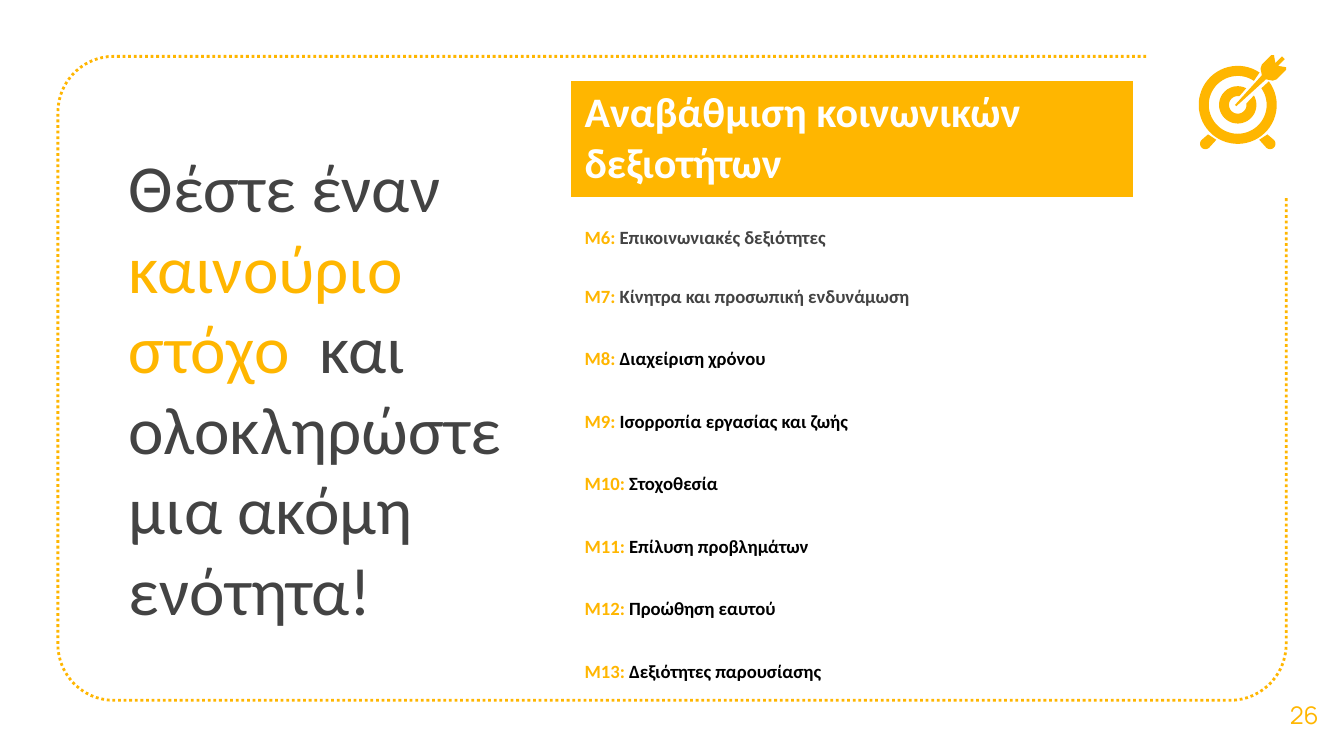
import math

from pptx import Presentation
from pptx.dml.color import RGBColor
from pptx.enum import dml, text
from pptx.oxml.ns import qn
from pptx.util import Pt

COLORS = {"accent": "FFB600", "dark": "434343", "black": "000000", "white": "FFFFFF"}
FONT = "Calibri"
NO_TABLE_STYLE = "{2D5ABB26-0587-4C30-8999-92F81FD0307C}"
UNITS = 100  # outline units in a point

TITLE = [
    ("Θέστε έναν ", "dark"),
    ("καινούριο στόχο  ", "accent"),
    ("και ολοκληρώστε μια ακόμη ενότητα!", "dark"),
]
HEADING = "Αναβάθμιση κοινωνικών δεξιοτήτων"
FIRST_MODULE = 6
MODULES = [
    ("Επικοινωνιακές δεξιότητες", "dark"),
    ("Κίνητρα και προσωπική ενδυνάμωση", "dark"),
    ("Διαχείριση χρόνου", "black"),
    ("Ισορροπία εργασίας και ζωής", "black"),
    ("Στοχοθεσία", "black"),
    ("Επίλυση προβλημάτων", "black"),
    ("Προώθηση εαυτού", "black"),
    ("Δεξιότητες παρουσίασης", "black"),
]


def rgb(name):
    return RGBColor.from_string(COLORS[name])


def add_span(para, words, color, size, font=FONT, bold=False):
    span = para.add_run()
    span.text = words
    span.font.name = font
    span.font.size = Pt(size)
    span.font.bold = bold
    span.font.color.rgb = rgb(color)


def add_text_box(page, box, spans, size, font=FONT, align=text.PP_ALIGN.LEFT,
                 anchor=text.MSO_ANCHOR.TOP):
    frame = page.shapes.add_textbox(*map(Pt, box)).text_frame
    frame.word_wrap = True
    frame.vertical_anchor = anchor
    frame.margin_left = frame.margin_right = Pt(7.2)
    frame.margin_top = frame.margin_bottom = Pt(7.2)
    para = frame.paragraphs[0]
    para.alignment = align
    for words, color in spans:
        add_span(para, words, color, size, font)


def arc(center, radius, start, end, step=6):
    """Points on an arc; degrees run clockwise from the right."""
    count = max(1, math.ceil(abs(end - start) / step))
    angles = [math.radians(start + (end - start) * i / count) for i in range(count + 1)]
    return [(center[0] + radius * math.cos(a), center[1] + radius * math.sin(a))
            for a in angles]


def add_outline(shapes, points, origin=(0, 0), close=True):
    scaled = [((x + origin[0]) * UNITS, (y + origin[1]) * UNITS) for x, y in points]
    builder = shapes.build_freeform(*scaled[0], scale=Pt(1) / UNITS)
    builder.add_line_segments(scaled[1:], close=close)
    shape = builder.convert_to_shape()
    shape.shadow.inherit = False
    return shape


def add_dotted_frame(page, box, radius, top_end, right_start):
    """Rounded frame left open at its top right corner."""
    left, top, width, height = box
    right, bottom = left + width, top + height
    points = [(top_end, top)]
    points += arc((left + radius, top + radius), radius, 270, 180)
    points += arc((left + radius, bottom - radius), radius, 180, 90)
    points += arc((right - radius, bottom - radius), radius, 90, 0)
    points.append((right, right_start))
    frame = add_outline(page.shapes, points, close=False)
    frame.fill.background()
    frame.line.color.rgb = rgb("accent")
    frame.line.width = Pt(1.5)
    frame.line.dash_style = dml.MSO_LINE.ROUND_DOT


def add_target_icon(page, origin):
    center = (20.9, 27.4)
    outer_ring = arc(center, 20.9, -37, 304) + arc(center, 15.5, 304, -35)
    inner_ring = arc(center, 10, -30, 297) + arc(center, 4.7, 280, -9)
    left_foot = arc((3.6, 48.2), 2.9, 45, 225) + [(5, 43.2), (9.4, 46.1)]
    right_foot = [(2 * center[0] - x, y) for x, y in left_foot]
    half_arrow = [(19.4, 27.4), (33.8, 11.5), (33.1, 7.9), (33.8, 5.8),
                  (38.9, 0.7), (40.3, 0.7), (41, 5), (44.6, 1.4)]
    diagonal = 47.5  # x + y along the arrow's axis
    arrow = half_arrow + [(diagonal - y, diagonal - x) for x, y in reversed(half_arrow)]

    icon = page.shapes.add_group_shape()
    for points in (outer_ring, inner_ring, left_foot, right_foot, arrow):
        part = add_outline(icon.shapes, points, origin)
        part.fill.solid()
        part.fill.fore_color.rgb = rgb("accent")
        part.line.fill.background()


def add_module_table(page, box, heading_height):
    left, top, width, height = box
    row_height = (height - heading_height) / len(MODULES)
    table = page.shapes.add_table(len(MODULES) + 1, 1, *map(Pt, box)).table
    table.first_row = table.horz_banding = False
    table._tbl.tblPr.find(qn("a:tableStyleId")).text = NO_TABLE_STYLE
    table.columns[0].width = Pt(width)

    table.rows[0].height = Pt(heading_height)
    heading = table.cell(0, 0)
    heading.fill.solid()
    heading.fill.fore_color.rgb = rgb("accent")
    add_span(heading.text_frame.paragraphs[0], HEADING, "white", 22.5, bold=True)

    for row, (name, color) in enumerate(MODULES, start=1):
        table.rows[row].height = Pt(row_height)
        cell = table.cell(row, 0)
        cell.fill.background()
        cell.margin_top = Pt(15.8 if row == 1 else 14)
        para = cell.text_frame.paragraphs[0]
        add_span(para, f"M{FIRST_MODULE + row - 1}: ", "accent", 10, bold=True)
        add_span(para, name, color, 10, bold=True)


def main():
    deck = Presentation()
    deck.slide_width, deck.slide_height = Pt(720), Pt(405)
    page = deck.slides.add_slide(deck.slide_layouts[6])
    add_dotted_frame(page, (31, 30.2, 658, 345), 30, top_end=614, right_start=105)
    add_text_box(page, (62, 70.6, 224.6, 67.7), TITLE, 36)
    add_text_box(page, (677.5, 361.5, 42.5, 43.2), [("26", "accent")], 13, "Manrope",
                 text.PP_ALIGN.CENTER, text.MSO_ANCHOR.MIDDLE)
    add_target_icon(page, (642.2, 28.8))
    add_module_table(page, (306, 43.3, 301, 330.2), heading_height=62.2)
    deck.save("out.pptx")


if __name__ == "__main__":
    main()
